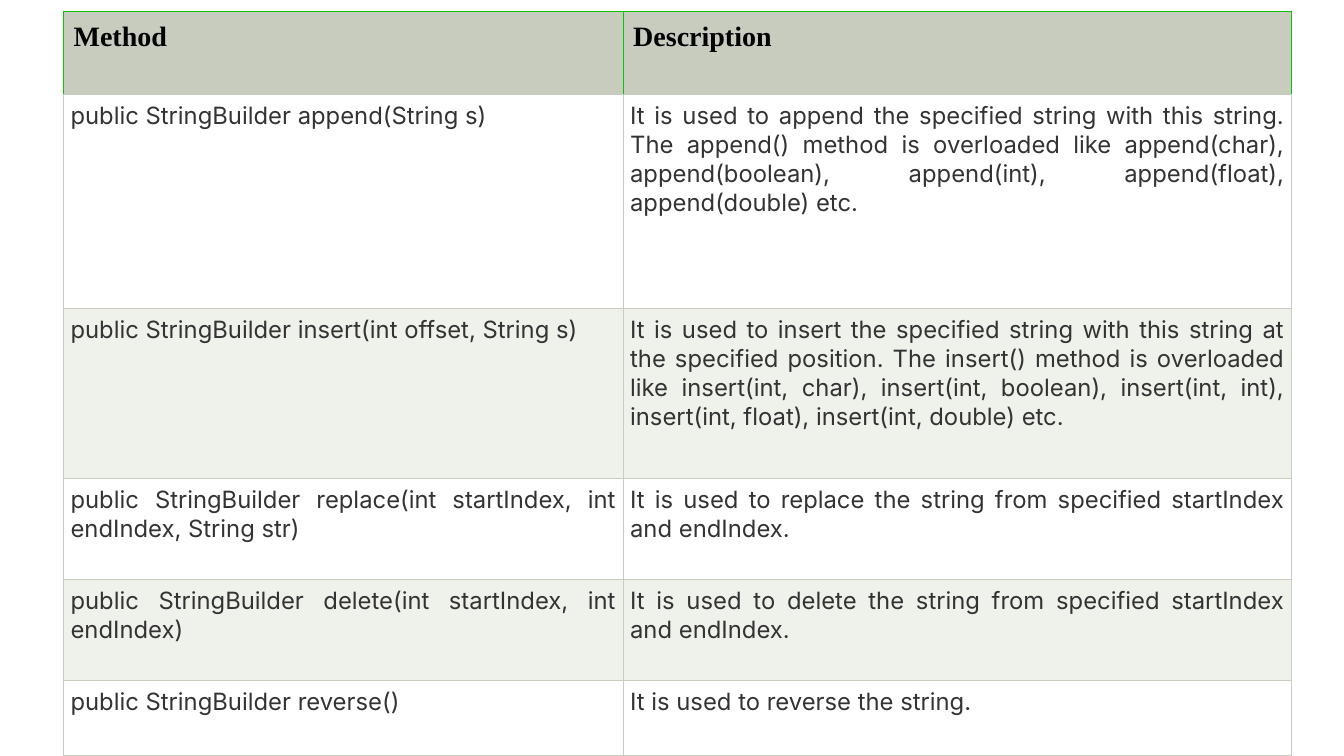
from lxml.etree import SubElement
from pptx import Presentation
from pptx.dml.color import RGBColor
from pptx.enum.text import PP_ALIGN
from pptx.oxml.ns import qn
from pptx.util import Emu, Pt

PX = 9144  # 100 px to the inch
COLORS = {
    "header": "C7CCBE", "plain": "FFFFFF", "band": "EFF1EB",
    "rule": "C7CCBE", "header_rule": "10C002",
    "title": "000000", "body": "333333",
}
HEADINGS = ("Method", "Description")
METHODS = [
    ("public StringBuilder append(String s)",
     "It is used to append the specified string with this string. The append() method is "
     "overloaded like append(char), append(boolean), append(int), append(float), "
     "append(double) etc."),
    ("public StringBuilder insert(int offset, String s)",
     "It is used to insert the specified string with this string at the specified position. "
     "The insert() method is overloaded like insert(int, char), insert(int, boolean), "
     "insert(int, int), insert(int, float), insert(int, double) etc."),
    ("public StringBuilder replace(int startIndex, int endIndex, String str)",
     "It is used to replace the string from specified startIndex and endIndex."),
    ("public StringBuilder delete(int startIndex, int endIndex)",
     "It is used to delete the string from specified startIndex and endIndex."),
    ("public StringBuilder reverse()", "It is used to reverse the string."),
]
COLUMN_WIDTHS = (555, 663)
ROW_HEIGHTS = (83, 212, 169, 100, 100, 75)


def px(length):
    return Emu(length * PX)


def rgb(name):
    return RGBColor.from_string(COLORS[name])


def set_borders(cell, left, right, top, bottom):
    """Draw the four sides; the XML schema wants them before the fill."""
    properties = cell._tc.get_or_add_tcPr()
    sides = zip(("lnL", "lnR", "lnT", "lnB"), (left, right, top, bottom))
    for index, (side, color) in enumerate(sides):
        line = SubElement(properties, qn("a:" + side), w=str(Pt(0.75)))
        fill = SubElement(line, qn("a:solidFill"))
        SubElement(fill, qn("a:srgbClr"), val=COLORS[color])
        properties.insert(index, line)


def fill_cell(cell, text, fill, inset):
    cell.fill.solid()
    cell.fill.fore_color.rgb = rgb(fill)
    cell.margin_left = cell.margin_right = px(inset)
    cell.margin_top = cell.margin_bottom = px(inset)
    cell.text_frame.text = text
    return cell.text_frame.paragraphs[0]


def style_text(para, font_name, size, color, bold):
    font = para.runs[0].font
    font.name, font.size, font.bold = font_name, Pt(size), bold
    font.color.rgb = rgb(color)


def header_cell(cell, text):
    para = fill_cell(cell, text, "header", 10)
    style_text(para, "Times New Roman", 20, "title", True)
    set_borders(cell, "header_rule", "header_rule", "header_rule", "rule")


def body_cell(cell, text, fill):
    para = fill_cell(cell, text, fill, 7)
    para.alignment = PP_ALIGN.JUSTIFY
    style_text(para, "Inter", 17, "body", False)
    set_borders(cell, "rule", "rule", "rule", "rule")


def method_table(page, left, top):
    frame = page.shapes.add_table(
        len(ROW_HEIGHTS), len(COLUMN_WIDTHS), px(left), px(top),
        px(sum(COLUMN_WIDTHS)), px(sum(ROW_HEIGHTS)))
    table = frame.table
    for column, width in zip(table.columns, COLUMN_WIDTHS):
        column.width = px(width)
    for row, height in zip(table.rows, ROW_HEIGHTS):
        row.height = px(height)
    for column, heading in enumerate(HEADINGS):
        header_cell(table.cell(0, column), heading)
    for row, texts in enumerate(METHODS, start=1):
        fill = "plain" if row % 2 else "band"
        for column, text in enumerate(texts):
            body_cell(table.cell(row, column), text, fill)


def main():
    deck = Presentation()
    deck.slide_width, deck.slide_height = px(1333), px(750)
    page = deck.slides.add_slide(deck.slide_layouts[6])
    method_table(page, 63, 11)
    deck.save("out.pptx")


if __name__ == "__main__":
    main()
